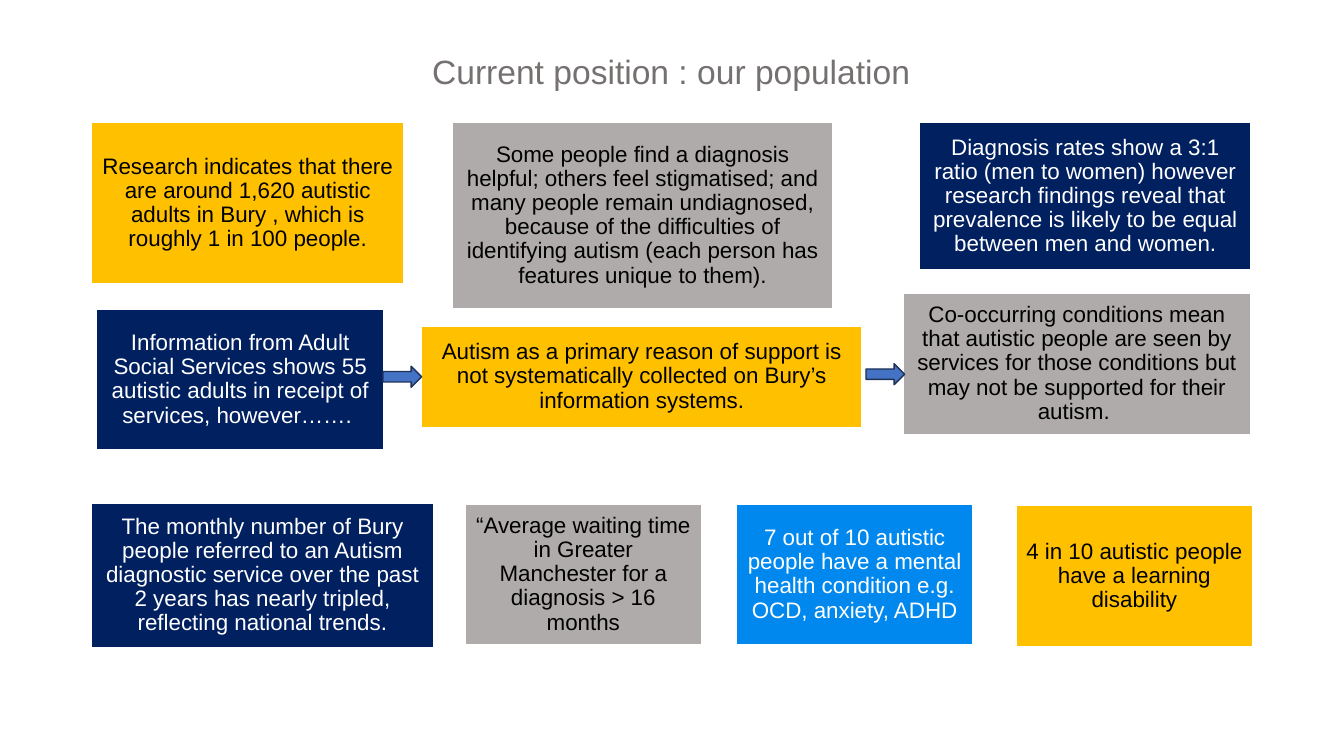
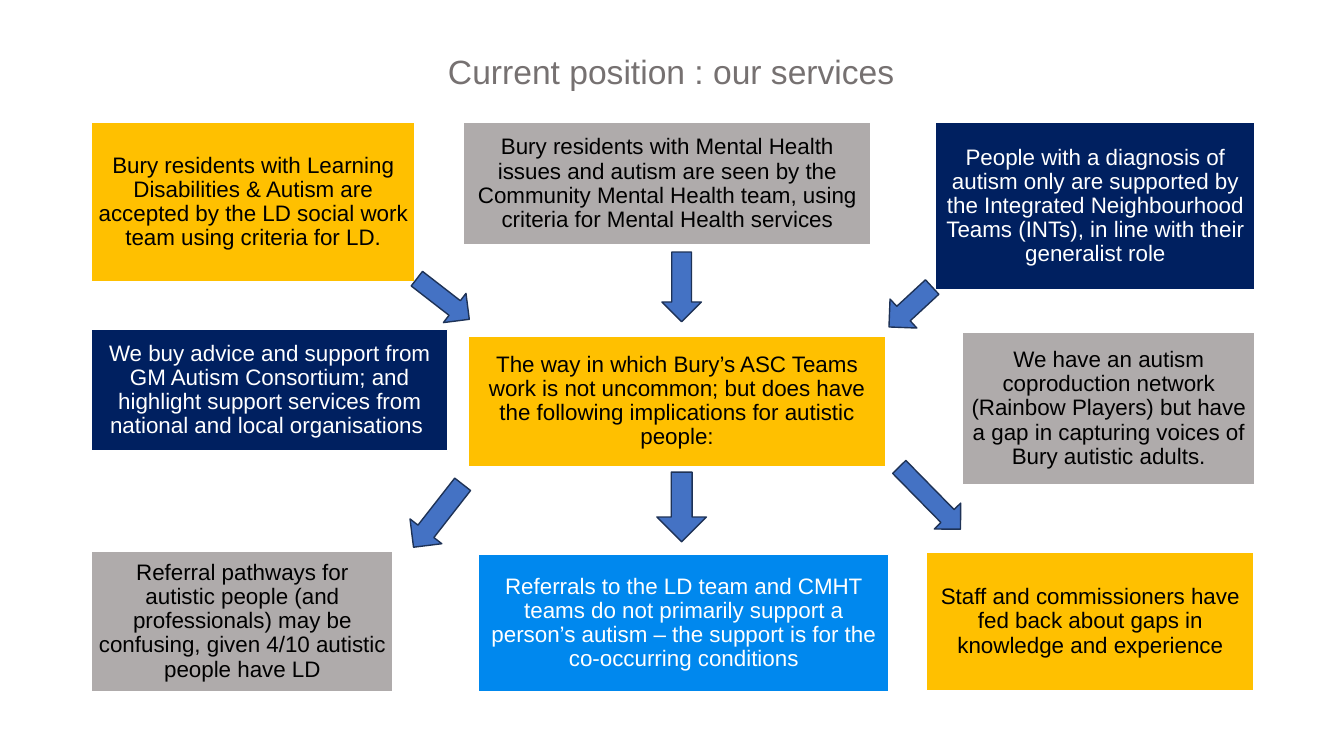
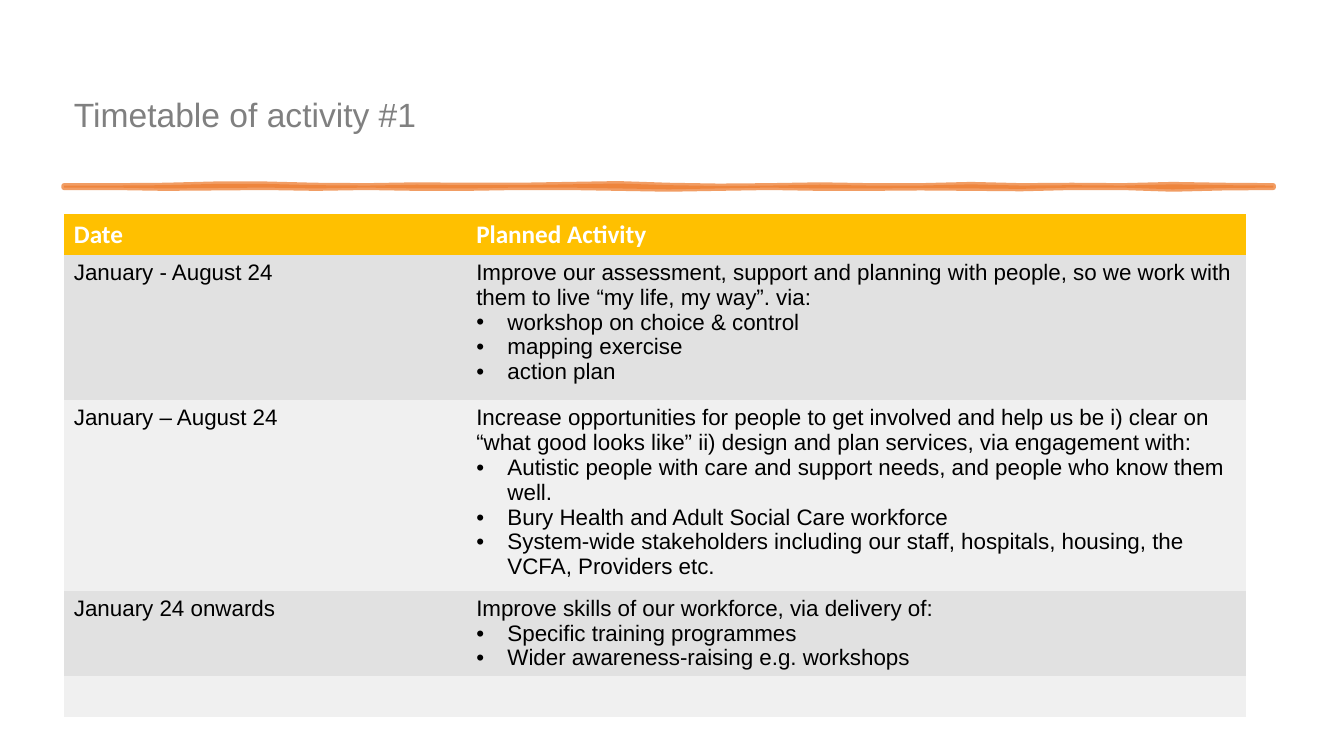
from lxml import etree
from pptx import Presentation
from pptx.dml.color import RGBColor
from pptx.enum.shapes import MSO_SHAPE
from pptx.enum.text import MSO_ANCHOR, MSO_AUTO_SIZE, PP_ALIGN
from pptx.oxml.ns import qn
from pptx.util import Emu, Inches, Pt

RECTANGLE = MSO_SHAPE.RECTANGLE
RIGHT_ARROW = MSO_SHAPE.RIGHT_ARROW
MIDDLE = MSO_ANCHOR.MIDDLE
BOTTOM = MSO_ANCHOR.BOTTOM
CENTER = PP_ALIGN.CENTER
LEFT = PP_ALIGN.LEFT
NO_AUTOFIT = MSO_AUTO_SIZE.NONE

WHITE = RGBColor(0xFF, 0xFF, 0xFF)
BLACK = RGBColor(0x00, 0x00, 0x00)
GOLD = RGBColor(0xFF, 0xC0, 0x00)
STONE = RGBColor(0xAF, 0xAB, 0xAB)
NAVY = RGBColor(0x00, 0x20, 0x60)
SKY = RGBColor(0x00, 0x88, 0xEE)
ARROW_BLUE = RGBColor(0x44, 0x72, 0xC4)
ARROW_EDGE = RGBColor(0x1E, 0x32, 0x56)
ORANGE = RGBColor(0xED, 0x7D, 0x31)
WARM_GREY = RGBColor(0x76, 0x71, 0x71)
MID_GREY = RGBColor(0x80, 0x80, 0x80)
BAND_DARK = RGBColor(0xE1, 0xE1, 0xE1)
BAND_LIGHT = RGBColor(0xF0, 0xF0, 0xF0)

COLUMNS, ROWS = 160, 90
MARGIN = 10.9
TOP = 14.6
TABLE_LEFT = 7.6
TABLE_STYLE = "{2D5ABB26-0587-4C30-8999-92F81FD0307C}"

POPULATION_CARDS = [
    (53.9, TOP, 45.2, 22.1, STONE, "Some people find a diagnosis helpful; others feel stigmatised; and many people remain undiagnosed, because of the difficulties of identifying autism (each person has features unique to them)."),
    (MARGIN, TOP, 37.2, 19.2, GOLD, "Research indicates that there are around 1,620 autistic adults in Bury , which is roughly 1 in 100 people."),
    (107.5, 34.9, 41.4, 16.8, STONE, "Co-occurring conditions mean that autistic people are seen by services for those conditions but may not be supported for their autism. "),
    (50.2, 38.8, 52.4, 12.1, GOLD, "Autism as a primary reason of support is not systematically collected on Bury’s information systems."),
    (11.5, 36.8, 34.2, 16.8, NAVY, "Information from Adult Social Services shows 55 autistic adults in receipt of services, however……. "),
    (109.5, TOP, 39.4, 17.5, NAVY, "Diagnosis rates show a 3:1 ratio (men to women) however research findings reveal that prevalence is likely to be equal between men and women."),
    (MARGIN, 59.9, 40.7, 17.2, NAVY, "The monthly number of Bury people referred to an Autism diagnostic service over the past 2 years has nearly tripled, reflecting national trends."),
    (55.4, 60, 28.1, 16.8, STONE, "“Average waiting time in Greater Manchester for a diagnosis > 16 months"),
    (87.7, 60, 28.1, 16.8, SKY, "7 out of 10 autistic people have a mental health condition e.g. OCD, anxiety, ADHD"),
    (121, 60.2, 28.1, 16.8, GOLD, "4 in 10 autistic people have a learning disability"),
]
POPULATION_ARROWS = [
    (45.6, 43.6, 4.6, 2.5, 0, 0.5),
    (103.1, 43.3, 4.6, 2.5, 0, 0.5),
]

SERVICE_CARDS = [
    (55.2, TOP, 48.5, 14.6, STONE, "Bury residents with Mental Health issues and autism are seen by the Community Mental Health team, using criteria for Mental Health services"),
    (MARGIN, TOP, 38.5, 19, GOLD, "Bury residents with Learning Disabilities & Autism are accepted by the LD social work team using criteria for LD."),
    (114.6, 39.6, 34.8, 18.1, STONE, "We have an autism coproduction network (Rainbow Players) but have a gap in capturing voices of Bury autistic adults."),
    (55.8, 40, 49.6, 15.6, GOLD, "The way in which Bury’s ASC Teams work is not uncommon; but does have the following implications for autistic people:"),
    (MARGIN, 39.2, 42.4, 14.5, NAVY, "We buy advice and support from GM Autism Consortium; and highlight support services from national and local organisations "),
    (111.4, TOP, 38, 19.9, NAVY, "People with a diagnosis of autism only are supported by the Integrated Neighbourhood Teams (INTs), in line with their generalist role"),
    (MARGIN, 65.6, 35.9, 16.8, STONE, "Referral pathways for autistic people (and professionals) may be confusing, given 4/10 autistic people have LD"),
    (57, 66, 48.8, 16.4, SKY, "Referrals to the LD team and CMHT teams do not primarily support a person’s autism – the support is for the co-occurring conditions"),
    (110.3, 65.8, 39, 16.4, GOLD, "Staff and commissioners have fed back about gaps in knowledge and experience"),
]
SERVICE_ARROWS = [
    (48.8, 33.4, 7.9, 4.4, 37.8, 0.5),
    (77, 31.8, 8.3, 4.7, 90, 0.5),
    (104.9, 34.2, 7, 4.7, 137.2, 0.5),
    (105.5, 57.1, 10.4, 4.4, 45.5, 0.5),
    (77, 57.4, 8.3, 5.9, 90, 0.42),
    (47.4, 59, 9.5, 4.8, 128, 0.5),
]

ACTIVITIES = [
    ("Date", ["Planned Activity"]),
    ("January - August 24", [
        "Improve our assessment, support and planning with people, so we work with them to live “my life, my way”. via:",
        "workshop on choice & control",
        "mapping exercise",
        "action plan",
    ]),
    ("January – August 24", [
        "Increase opportunities for people to get involved and help us be i) clear on “what good looks like” ii) design and plan services, via engagement with:",
        "Autistic people with care and support needs, and people who know them well.",
        "Bury Health and Adult Social Care workforce",
        "System-wide stakeholders including our staff, hospitals, housing, the VCFA, Providers etc.",
    ]),
    ("January 24 onwards", [
        "Improve skills of our workforce, via delivery of:",
        "Specific training programmes",
        "Wider awareness-raising e.g. workshops",
    ]),
    ("", []),
]
ACTIVITY_COLUMNS = [47.9, 92.9]
ACTIVITY_ROWS = [4.5, 17.3, 22.7, 10, 4.5]

BRUSH_TOP = [0, 0, -0.05, -0.2, -0.2, -0.05, 0, -0.1, -0.05, -0.05, -0.15, -0.25, -0.05,
             0.05, 0, -0.1, 0, 0, -0.15, 0, -0.05, 0, -0.15, -0.05, 0]
BRUSH_BOTTOM = [0, 0, 0.1, 0.05, 0, 0.1, 0, 0.1, 0.1, 0, 0, 0.1, 0.2,
                0.1, 0, 0.1, 0.1, 0.05, 0.1, 0.15, 0, 0, 0.2, 0.05, 0]


class Deck:
    def __init__(self):
        self.file = Presentation()
        self.file.slide_width = Emu(12192000)
        self.file.slide_height = Inches(7.5)
        self.page = None

    def across(self, columns):
        return Emu(round(self.file.slide_width * columns / COLUMNS))

    def down(self, rows):
        return Emu(round(self.file.slide_height * rows / ROWS))

    def area(self, left, top, width, height):
        return self.across(left), self.down(top), self.across(width), self.down(height)

    def style(self, para, size, color, font="Arial", bold=False):
        for span in para.runs:
            span.font.name = font
            span.font.size = Pt(size)
            span.font.bold = bold
            span.font.color.rgb = color

    def add_page(self, title, place=(MARGIN, 2.8, 138, 11.9), color=WARM_GREY, align=CENTER, anchor=MIDDLE):
        self.page = self.file.slides.add_slide(self.file.slide_layouts[5])
        box = self.page.shapes.title
        box.left, box.top, box.width, box.height = self.area(*place)
        frame = box.text_frame
        frame.text = title
        frame.auto_size = NO_AUTOFIT
        frame.word_wrap = True
        frame.vertical_anchor = anchor
        para = frame.paragraphs[0]
        para.alignment = align
        para.line_spacing = 0.9
        self.style(para, 24, color)

    def paint(self, shape, fill, line, width):
        shape.shadow.inherit = False
        shape.fill.solid()
        shape.fill.fore_color.rgb = fill
        shape.line.color.rgb = line
        shape.line.width = Pt(width)

    def add_card(self, left, top, width, height, fill, text):
        card = self.page.shapes.add_shape(RECTANGLE, *self.area(left, top, width, height))
        self.paint(card, fill, WHITE, 1)
        frame = card.text_frame
        frame.word_wrap = True
        frame.vertical_anchor = MIDDLE
        frame.margin_left = frame.margin_right = Inches(0.07)
        frame.margin_top = frame.margin_bottom = Inches(0.07)
        frame.text = text
        para = frame.paragraphs[0]
        para.alignment = CENTER
        para.line_spacing = 0.9
        self.style(para, 16, WHITE if fill in (NAVY, SKY) else BLACK)

    def add_arrow(self, left, top, width, height, angle, shaft):
        arrow = self.page.shapes.add_shape(RIGHT_ARROW, *self.area(left, top, width, height))
        arrow.adjustments[0] = shaft
        arrow.rotation = angle
        self.paint(arrow, ARROW_BLUE, ARROW_EDGE, 1)

    def add_board(self, title, cards, arrows):
        self.add_page(title)
        for card in cards:
            self.add_card(*card)
        for arrow in arrows:
            self.add_arrow(*arrow)

    def add_brush_line(self, left, top, width, thickness):
        step = width / (len(BRUSH_TOP) - 1)
        upper = [(left + i * step, top + shift) for i, shift in enumerate(BRUSH_TOP)]
        lower = [(left + i * step, top + thickness + shift) for i, shift in enumerate(BRUSH_BOTTOM)]
        points = [(self.across(x), self.down(y)) for x, y in upper + lower[::-1]]
        builder = self.page.shapes.build_freeform(*points[0], scale=1.0)
        builder.add_line_segments(points[1:], close=True)
        brush = builder.convert_to_shape()
        self.paint(brush, ORANGE, ORANGE, 3.5)
        for color in brush.element.spPr.iter(qn("a:srgbClr")):
            etree.SubElement(color, qn("a:alpha"), val="75000")
        etree.SubElement(brush.line._get_or_add_ln(), qn("a:round"))

    def add_bullet(self, para):
        props = para._p.get_or_add_pPr()
        props.set("marL", str(Inches(0.31)))
        props.set("indent", str(-Inches(0.31)))
        etree.SubElement(props, qn("a:buFont"), typeface="Arial")
        etree.SubElement(props, qn("a:buChar"), char="•")

    def fill_cell(self, cell, lines, fill, heading):
        cell.fill.solid()
        cell.fill.fore_color.rgb = fill
        if not lines:
            return
        cell.text_frame.text = "\n".join(lines)
        for index, para in enumerate(cell.text_frame.paragraphs):
            if index:
                self.add_bullet(para)
            if heading:
                self.style(para, 18, WHITE, "Calibri", True)
            else:
                self.style(para, 16, BLACK)

    def add_schedule(self, left, top, widths, heights, entries):
        place = self.area(left, top, sum(widths), sum(heights))
        holder = self.page.shapes.add_table(len(heights), len(widths), *place)
        for style_id in holder.element.iter(qn("a:tableStyleId")):
            style_id.text = TABLE_STYLE
        table = holder.table
        table.horz_banding = False
        for column, width in zip(table.columns, widths):
            column.width = self.across(width)
        for index, (row, height, (date, lines)) in enumerate(zip(table.rows, heights, entries)):
            row.height = self.down(height)
            heading = index == 0
            fill = GOLD if heading else BAND_DARK if index % 2 else BAND_LIGHT
            self.fill_cell(row.cells[0], [date] if date else [], fill, heading)
            self.fill_cell(row.cells[1], lines, fill, heading)


def main():
    deck = Deck()
    deck.add_board("Current position : our population", POPULATION_CARDS, POPULATION_ARROWS)
    deck.add_board("Current position : our services", SERVICE_CARDS, SERVICE_ARROWS)
    deck.add_page("Timetable of activity #1", (TABLE_LEFT, 8.8, 144.6, 7.9), MID_GREY, LEFT, BOTTOM)
    deck.add_brush_line(TABLE_LEFT, 22.1, 144, 0.24)
    deck.add_schedule(TABLE_LEFT, 25.5, ACTIVITY_COLUMNS, ACTIVITY_ROWS, ACTIVITIES)
    deck.file.save("out.pptx")


if __name__ == "__main__":
    main()
